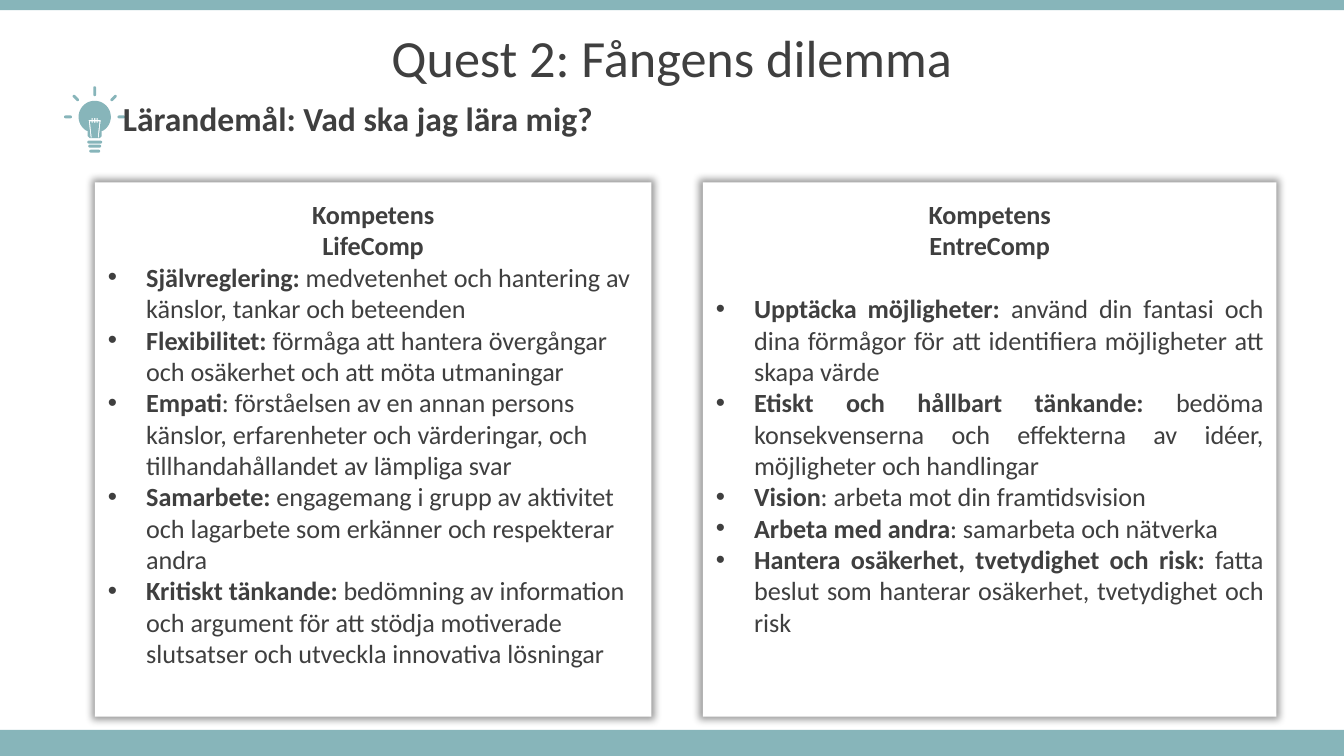
from math import atan2, cos, pi, sin

from lxml.etree import SubElement
from pptx import Presentation
from pptx.dml.color import RGBColor
from pptx.enum.shapes import MSO_SHAPE as Shape
from pptx.enum.text import MSO_ANCHOR as Anchor, MSO_AUTO_SIZE as AutoSize, PP_ALIGN as Align
from pptx.oxml.ns import qn
from pptx.util import Pt

PX = 9144
FONT = "Calibri"
COLORS = {"teal": "87B5BA", "text": "3F3F3F", "white": "FFFFFF", "shadow": "000000"}
BODY_SIZE = 18.67

LIFE_SKILLS = [
    ("Självreglering: ", "medvetenhet och hantering av känslor, tankar och beteenden"),
    ("Flexibilitet: ", "förmåga att hantera övergångar och osäkerhet och att möta utmaningar"),
    ("Empati", ": förståelsen av en annan persons känslor, erfarenheter och värderingar, "
               "och tillhandahållandet av lämpliga svar"),
    ("Samarbete: ", "engagemang i grupp av aktivitet och lagarbete som erkänner och respekterar andra"),
    ("Kritiskt tänkande: ", "bedömning av information och argument för att stödja motiverade "
                            "slutsatser och utveckla innovativa lösningar"),
]
ENTRE_SKILLS = [
    ("Upptäcka möjligheter: ", "använd din fantasi och dina förmågor för att identifiera "
                               "möjligheter att skapa värde"),
    ("Etiskt och hållbart tänkande: ", "bedöma konsekvenserna och effekterna av idéer, "
                                       "möjligheter och handlingar"),
    ("Vision", ": arbeta mot din framtidsvision"),
    ("Arbeta med andra", ": samarbeta och nätverka"),
    ("Hantera osäkerhet, tvetydighet och risk: ", "fatta beslut som hanterar osäkerhet, "
                                                  "tvetydighet och risk"),
]


def rgb(name):
    return RGBColor.from_string(COLORS[name])


def apply(target, **values):
    for name, value in values.items():
        setattr(target, name, value)


def place(shape, left, top, width, height):
    apply(shape, left=left * PX, top=top * PX, width=width * PX, height=height * PX)


def paint(shape, color):
    shape.shadow.inherit = False
    shape.fill.solid()
    shape.fill.fore_color.rgb = rgb(color)
    shape.line.fill.background()


def add_box(page, color, *area):
    box = page.shapes.add_shape(Shape.RECTANGLE, *(value * PX for value in area))
    paint(box, color)
    return box


def set_frame(shape, anchor, side, top):
    frame = shape.text_frame
    apply(frame, word_wrap=True, auto_size=AutoSize.NONE, vertical_anchor=anchor,
          margin_left=side * PX, margin_right=side * PX,
          margin_top=top * PX, margin_bottom=5 * PX)
    return frame


def write(para, text, size, bold=False):
    span = para.add_run()
    span.text = text
    apply(span.font, name=FONT, size=Pt(size), bold=bold)
    span.font.color.rgb = rgb("text")


def add_bullet(para):
    props = para._p.get_or_add_pPr()
    props.set("marL", str(38 * PX))
    props.set("indent", str(-38 * PX))
    color = SubElement(props, qn("a:buClr"))
    SubElement(color, qn("a:srgbClr"), val=COLORS["text"])
    SubElement(props, qn("a:buFont"), typeface="Arial")
    SubElement(props, qn("a:buChar"), char="•")


def add_glow(shape):
    effects = shape._element.spPr.find(qn("a:effectLst"))
    shadow = SubElement(effects, qn("a:outerShdw"), blurRad=str(Pt(5)), dist="0", dir="0",
                        sx="101000", sy="101000", algn="ctr", rotWithShape="0")
    color = SubElement(shadow, qn("a:srgbClr"), val=COLORS["shadow"])
    SubElement(color, qn("a:alpha"), val="40000")


def add_card(page, left, width, name, skills, align, gap):
    card = add_box(page, "white", left, 181, width, 530)
    add_glow(card)
    frame = set_frame(card, Anchor.TOP, 13, 16)
    heading = frame.paragraphs[0]
    for para, text in ((heading, "Kompetens"), (frame.add_paragraph(), name)):
        para.alignment = Align.CENTER
        write(para, text, BODY_SIZE, True)
    para.space_after = Pt(gap)
    for term, meaning in skills:
        para = frame.add_paragraph()
        para.alignment = align
        add_bullet(para)
        write(para, term, BODY_SIZE, True)
        write(para, meaning, BODY_SIZE)


def arc(x, y, radius, start, end, steps):
    angles = (start + (end - start) * step / steps for step in range(steps + 1))
    return [(x + radius * cos(angle), y + radius * sin(angle)) for angle in angles]


def capsule(x1, y1, x2, y2):
    angle = atan2(y2 - y1, x2 - x1)
    return (arc(x2, y2, 1.4, angle - pi / 2, angle + pi / 2, 6)
            + arc(x1, y1, 1.4, angle + pi / 2, angle + 3 * pi / 2, 6))


def add_bulb(page, x, y):
    glass = arc(x, y, 16, 0.68 * pi, 2.32 * pi, 40)
    neck = [(x + 7, y + 14), (x + 7, y + 19), (x + 5, y + 21),
            (x - 5, y + 21), (x - 7, y + 19), (x - 7, y + 14)]
    half = [(0.6, 1), (0.6, 3), (2, 3), (2, 1), (3, 1), (3, 3), (6, 3),
            (4, 20.5), (3, 20.5), (4.7, 4.4), (3, 4.4), (3, 6), (2, 6),
            (2, 4.4), (0.6, 4.4), (0.6, 6)]
    filament = ([(x + dx, y + dy) for dx, dy in half]
                + [(x - dx, y + dy) for dx, dy in reversed(half)])
    rays = [capsule(x + 24 * cos(turn), y + 24 * sin(turn) - (turn in (-pi / 2,)) * -2,
                    x + 29 * cos(turn), y + 29 * sin(turn))
            for turn in (-pi, -3 * pi / 4, -pi / 2, -pi / 4, 0)]
    rings = [capsule(x - half_width, y + drop, x + half_width, y + drop)
             for half_width, drop in ((6, 25), (5, 29), (4, 34))]
    first, *others = [[(round(px * PX), round(py * PX)) for px, py in outline]
                      for outline in (glass + neck, filament, *rays, *rings)]
    builder = page.shapes.build_freeform(*first[0], scale=1.0)
    builder.add_line_segments(first[1:], close=True)
    for outline in others:
        builder.move_to(*outline[0])
        builder.add_line_segments(outline[1:], close=True)
    paint(builder.convert_to_shape(), "teal")


def add_title(page, text):
    title = page.shapes.title
    place(title, 0, 18, 1333, 84)
    para = set_frame(title, Anchor.MIDDLE, 10, 5).paragraphs[0]
    apply(para, alignment=Align.CENTER, line_spacing=0.9)
    write(para, text, 37.3)


def add_subtitle(page, text):
    box = page.shapes.add_textbox(*(value * PX for value in (112, 97, 658, 41)))
    write(set_frame(box, Anchor.MIDDLE, 10, 5).paragraphs[0], text, 24, True)


def main():
    deck = Presentation()
    apply(deck, slide_width=round(13.33 * 100) * PX, slide_height=750 * PX)
    page = deck.slides.add_slide(deck.slide_layouts[5])
    add_box(page, "teal", 0, 724, 1333, 26)
    add_box(page, "teal", 0, 0, 1333, 10)
    add_bulb(page, 94, 116)
    add_subtitle(page, "Lärandemål: Vad ska jag lära mig?")
    add_card(page, 94, 552, "LifeComp", LIFE_SKILLS, Align.LEFT, 0)
    add_card(page, 697, 569, "EntreComp", ENTRE_SKILLS, Align.JUSTIFY, 22.4)
    add_title(page, "Quest 2: Fångens dilemma")
    deck.save("out.pptx")


if __name__ == "__main__":
    main()
